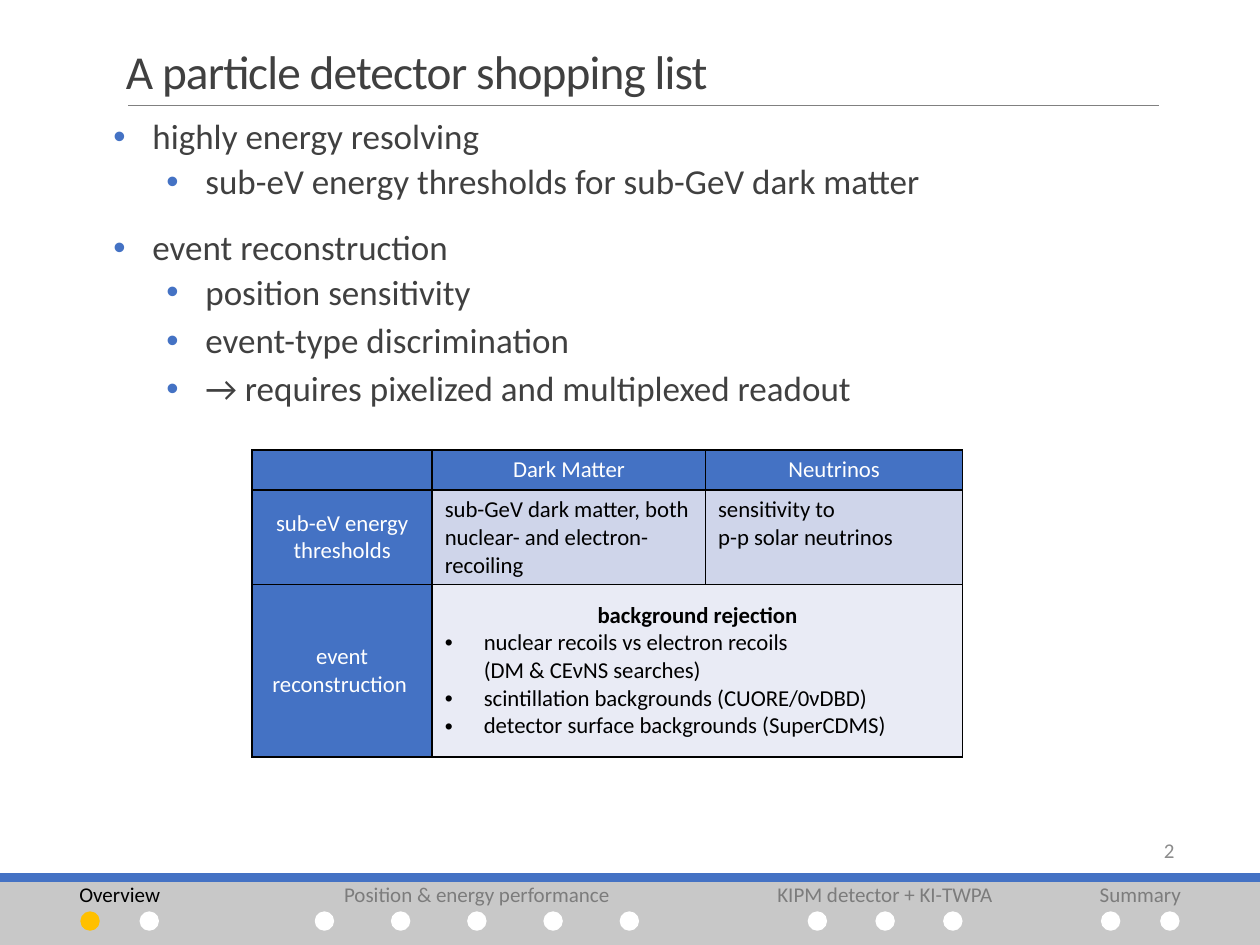
from lxml.etree import SubElement
from pptx import Presentation
from pptx.dml.color import RGBColor
from pptx.enum.shapes import MSO_CONNECTOR, MSO_SHAPE
from pptx.enum.text import MSO_ANCHOR, PP_ALIGN
from pptx.oxml.ns import qn
from pptx.util import Emu, Inches, Pt

COLORS = {
    "blue": "4472C4", "footer": "C8C8C8", "rule": "808080", "number": "8C8C8C",
    "text": "404040", "black": "000000", "white": "FFFFFF", "muted": "7C7C7C",
    "current": "FFC000", "band": "CFD5EA", "light": "E9EBF5",
}
FONT = "Calibri"
TITLE = "A particle detector shopping list"
PAGE_NUMBER = "2"
BULLETS = [
    (0, "highly energy resolving"),
    (1, "sub-eV energy thresholds for sub-GeV dark matter"),
    (0, "event reconstruction"),
    (1, "position sensitivity"),
    (1, "event-type discrimination"),
    (1, "→ requires pixelized and multiplexed readout"),
]
LEVELS = [
    {"indent": 0.31, "before": 12, "after": 2},
    {"indent": 0.73, "before": 2, "after": 4},
]
TABLE = [
    ["", "Dark Matter", "Neutrinos"],
    ["sub-eV energy thresholds",
     "sub-GeV dark matter, both nuclear- and electron-recoiling",
     "sensitivity to \vp-p solar neutrinos"],
    ["event reconstruction ",
     "background rejection\n"
     "nuclear recoils vs electron recoils \v(DM & CEνNS searches)\n"
     "scintillation backgrounds (CUORE/0νDBD)\n"
     "detector surface backgrounds (SuperCDMS)",
     ""],
]
COLUMN_WIDTHS = [1.43, 2.17, 2.04]
ROW_HEIGHTS = [0.23, 0.6, 1.37]
ROW_FILLS = ["blue", "band", "light"]
SECTIONS = [
    ("Overview", 2),
    ("Position & energy performance", 5),
    ("KIPM detector + KI-TWPA", 3),
    ("Summary", 2),
]
CURRENT_SECTION, CURRENT_DOT = 0, 0
HANGING = 0.31
DOT_SIZE = 0.14
WIDTH_PER_DOT = 0.81
FOOTER_TOP = 7
DOT_TOP = 7.24

presentation = Presentation()
presentation.slide_width, presentation.slide_height = Inches(10), Inches(7.5)
slide = presentation.slides.add_slide(presentation.slide_layouts[6])


def color(name):
    return RGBColor.from_string(COLORS[name])


def format_runs(paragraph, size, name, bold=False):
    for run in paragraph.runs:
        run.font.name = FONT
        run.font.size = Pt(size)
        run.font.bold = bold
        run.font.color.rgb = color(name)


def add_bullet(paragraph, left, bullet_color=None):
    properties = paragraph._p.get_or_add_pPr()
    properties.set("marL", str(Inches(left)))
    properties.set("indent", str(-Inches(HANGING)))
    if bullet_color:
        holder = SubElement(properties, qn("a:buClr"))
        SubElement(holder, qn("a:srgbClr"), val=COLORS[bullet_color])
    SubElement(properties, qn("a:buFont"), typeface="Arial")
    SubElement(properties, qn("a:buChar"), char="•")


def add_text(box, text, size, name, align=PP_ALIGN.LEFT,
             anchor=MSO_ANCHOR.TOP, margins=(0.1, 0.05)):
    shape = slide.shapes.add_textbox(*map(Inches, box))
    frame = shape.text_frame
    frame.word_wrap = True
    frame.vertical_anchor = anchor
    frame.margin_left = frame.margin_right = Inches(margins[0])
    frame.margin_top = frame.margin_bottom = Inches(margins[1])
    frame.text = text
    for paragraph in frame.paragraphs:
        paragraph.alignment = align
        format_runs(paragraph, size, name)
    return frame


def add_block(kind, box, name, outlined=False):
    shape = slide.shapes.add_shape(kind, *map(Inches, box))
    shape.shadow.inherit = False
    shape.fill.solid()
    shape.fill.fore_color.rgb = color(name)
    if outlined:
        shape.line.color.rgb = color(name)
        shape.line.width = Pt(1)
    else:
        shape.line.fill.background()


def add_borders(cell):
    properties = cell._tc.get_or_add_tcPr()
    for side in ("a:lnL", "a:lnR", "a:lnT", "a:lnB"):
        line = SubElement(properties, qn(side), w=str(Pt(1)))
        fill = SubElement(line, qn("a:solidFill"))
        SubElement(fill, qn("a:srgbClr"), val=COLORS["black"])


def add_frame():
    add_block(MSO_SHAPE.RECTANGLE, (0, FOOTER_TOP, 10, 0.5), "footer")
    add_block(MSO_SHAPE.RECTANGLE, (0, FOOTER_TOP - 0.07, 10, 0.07), "blue")
    rule = slide.shapes.add_connector(
        MSO_CONNECTOR.STRAIGHT, *map(Inches, (1.02, 0.84, 9.2, 0.84)))
    rule.line.color.rgb = color("rule")
    rule.line.width = Pt(0.5)
    SubElement(rule._element.spPr, qn("a:effectLst"))
    add_text((7.17, 6.55, 2.25, 0.4), PAGE_NUMBER, 12, "number",
             PP_ALIGN.RIGHT, MSO_ANCHOR.MIDDLE)


def add_title_and_bullets():
    title = add_text((0.9, 0.18, 8.25, 0.66), TITLE, 27, "text",
                     anchor=MSO_ANCHOR.BOTTOM).paragraphs[0]
    title.line_spacing = 0.85
    title.runs[0].font._element.set("spc", "-50")
    body = add_text((0.9, 0.9, 8.25, 5.52), "\n".join(text for _, text in BULLETS),
                    20, "text", margins=(0, 0.05))
    for index, (paragraph, (level, _)) in enumerate(zip(body.paragraphs, BULLETS)):
        style = LEVELS[level]
        add_bullet(paragraph, style["indent"], "blue")
        paragraph.level = level
        paragraph.line_spacing = 0.9
        paragraph.space_before = Pt(style["before"] if index else 0)
        paragraph.space_after = Pt(style["after"])


def add_detector_table():
    box = (2, 3.57, sum(COLUMN_WIDTHS), sum(ROW_HEIGHTS))
    table = slide.shapes.add_table(
        len(TABLE), len(COLUMN_WIDTHS), *map(Inches, box)).table
    for column, width in zip(table.columns, COLUMN_WIDTHS):
        column.width = Inches(width)
    for row, height in zip(table.rows, ROW_HEIGHTS):
        row.height = Inches(height)
    table.first_row = table.horz_banding = False
    table.cell(2, 1).merge(table.cell(2, 2))
    for row, texts in enumerate(TABLE):
        for column, text in enumerate(texts):
            cell = table.cell(row, column)
            header = row == 0 or column == 0
            centered = header or row == 2
            add_borders(cell)
            cell.fill.solid()
            cell.fill.fore_color.rgb = color("blue" if header else ROW_FILLS[row])
            cell.vertical_anchor = MSO_ANCHOR.MIDDLE if centered else MSO_ANCHOR.TOP
            cell.text_frame.text = text
            for index, paragraph in enumerate(cell.text_frame.paragraphs):
                if index:
                    add_bullet(paragraph, HANGING)
                elif centered:
                    paragraph.alignment = PP_ALIGN.CENTER
                format_runs(paragraph, 13, "white" if header else "black",
                            row == 2 and column == 1 and index == 0)
                if not text:
                    SubElement(paragraph._p, qn("a:endParaRPr"), sz="1300")


def add_navigation():
    left = 0.14
    for section, (label, count) in enumerate(SECTIONS):
        width = WIDTH_PER_DOT * count
        add_text((left, FOOTER_TOP, width, 0.2), label, 12,
                 "black" if section == CURRENT_SECTION else "muted",
                 PP_ALIGN.CENTER, margins=(0, 0))
        gap = width / (count + 1) - DOT_SIZE / 2
        first = left + (width - gap * (count - 1) - DOT_SIZE) / 2
        for dot in range(count):
            current = (section, dot) == (CURRENT_SECTION, CURRENT_DOT)
            add_block(MSO_SHAPE.OVAL, (first + dot * gap, DOT_TOP, DOT_SIZE, DOT_SIZE),
                      "current" if current else "white", outlined=True)
        left += width


add_frame()
add_title_and_bullets()
add_detector_table()
add_navigation()
presentation.save("out.pptx")
